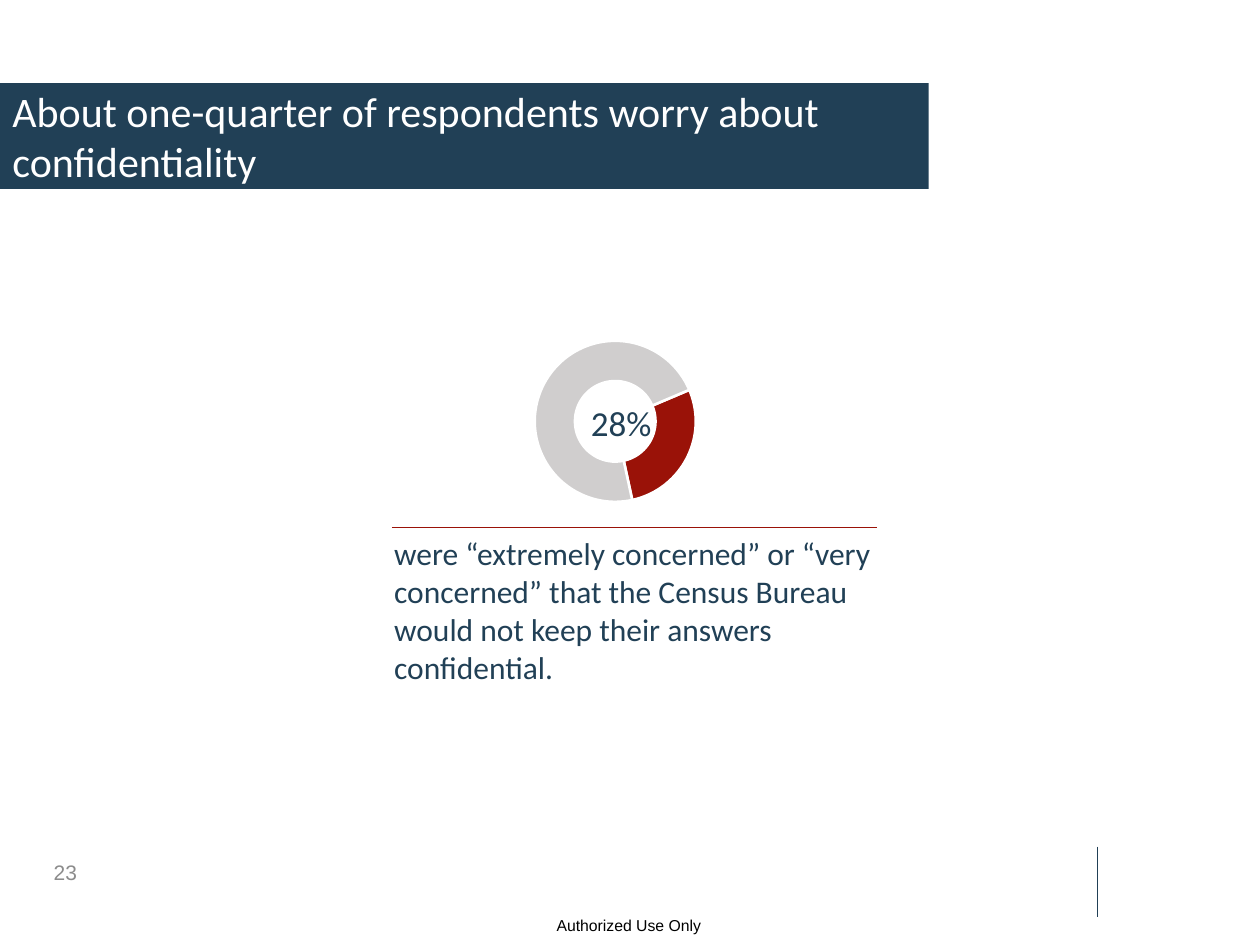
from dataclasses import dataclass

from lxml.etree import SubElement
from pptx import Presentation
from pptx.chart.data import CategoryChartData
from pptx.dml.color import RGBColor
from pptx.enum.chart import XL_CHART_TYPE
from pptx.enum.shapes import MSO_CONNECTOR, MSO_SHAPE
from pptx.enum.text import MSO_ANCHOR, PP_ALIGN
from pptx.oxml import parse_xml
from pptx.oxml.ns import nsdecls, qn
from pptx.util import Inches, Pt


@dataclass(frozen=True)
class Theme:
    navy: str = "214056"
    red: str = "9A1208"
    silver: str = "D0CECE"
    gray: str = "8C8C8C"
    white: str = "FFFFFF"
    black: str = "000000"
    body_font: str = "Calibri"
    footer_font: str = "Arial"
    title_size: float = 24
    figure_size: float = 20
    body_size: float = 18
    number_size: float = 12
    chart_size: float = 10
    footer_size: float = 9
    rule_width: float = 0.5


THEME = Theme()
WIDTH, HEIGHT = 10, 7.5
SHARE = 28
CATEGORIES = ("1", "2")
VALUES = (SHARE, 100 - SHARE)
SLICE_COLORS = (THEME.red, THEME.silver)
HOLE_SIZE, FIRST_ANGLE = 75, 67
PLOT_LAYOUT = {"x": 0.06, "y": 0.02, "w": 0.82, "h": 0.98}

BANNER_AREA = (0, 0.66, 7.37, 0.84)
CHART_AREA = (4.15, 2.59, 1.56, 1.48)
RULE_Y = 4.19
FOOTER_Y = 6.72

TEXTS = [
    ("About one-quarter of respondents worry about confidentiality",
     (0, 0.78, 6.88, 0.59), THEME.body_font, THEME.title_size, THEME.white,
     PP_ALIGN.LEFT, MSO_ANCHOR.MIDDLE),
    ("23", (0.28, FOOTER_Y, 0.43, 0.4), THEME.footer_font, THEME.number_size,
     THEME.gray, PP_ALIGN.RIGHT, MSO_ANCHOR.MIDDLE),
    ("were “extremely concerned” or “very concerned” that the Census Bureau "
     "would not keep their answers confidential.",
     (3.03, RULE_Y, 4.08, 1.31), THEME.body_font, THEME.body_size, THEME.navy,
     PP_ALIGN.LEFT, MSO_ANCHOR.TOP),
    (f"{SHARE}%", (4.58, 3.14, 0.7, 0.44), THEME.body_font, THEME.figure_size,
     THEME.navy, PP_ALIGN.CENTER, MSO_ANCHOR.TOP),
    ("Authorized Use Only", (0.13, 7.22, 9.72, 0.25), THEME.footer_font,
     THEME.footer_size, THEME.black, PP_ALIGN.CENTER, MSO_ANCHOR.TOP),
]

RULES = [
    ((8.71, FOOTER_Y), (8.71, 7.28), THEME.navy),
    ((3.11, RULE_Y), (6.96, RULE_Y), THEME.red),
]


def color(value):
    return RGBColor.from_string(value)


def inches(lengths):
    return [Inches(length) for length in lengths]


def add_banner(page):
    banner = page.shapes.add_shape(MSO_SHAPE.RECTANGLE, *inches(BANNER_AREA))
    banner.shadow.inherit = False
    banner.fill.solid()
    banner.fill.fore_color.rgb = color(THEME.navy)
    banner.line.fill.background()


def add_rule(page, start, end, tint):
    rule = page.shapes.add_connector(MSO_CONNECTOR.STRAIGHT, *inches(start + end))
    rule.line.color.rgb = color(tint)
    rule.line.width = Pt(THEME.rule_width)
    SubElement(rule._element.spPr, qn("a:effectLst"))


def add_text(page, text, area, font, size, tint, alignment, anchor):
    box = page.shapes.add_textbox(*inches(area))
    box.text_frame.word_wrap = True
    box.text_frame.vertical_anchor = anchor
    paragraph = box.text_frame.paragraphs[0]
    paragraph.text = text
    paragraph.alignment = alignment
    paragraph.font.name = font
    paragraph.font.size = Pt(size)
    paragraph.font.color.rgb = color(tint)


def add_doughnut(page):
    data = CategoryChartData()
    data.categories = CATEGORIES
    data.add_series("Series 1", VALUES)
    chart = page.shapes.add_chart(
        XL_CHART_TYPE.DOUGHNUT, *inches(CHART_AREA), data).chart
    chart.has_legend = False
    chart.has_title = False
    chart.font.name = THEME.body_font
    chart.font.size = Pt(THEME.chart_size)
    chart.font.color.rgb = color(THEME.black)

    plot = chart.plots[0]
    plot.vary_by_categories = True
    plot.has_data_labels = False
    for index, tint in enumerate(SLICE_COLORS):
        wedge = plot.series[0].points[index].format
        wedge.fill.solid()
        wedge.fill.fore_color.rgb = color(tint)
        wedge.line.color.rgb = color(THEME.white)
        wedge.line.width = Pt(1.5)

    doughnut = plot._element
    for tag, value in (("c:firstSliceAng", FIRST_ANGLE), ("c:holeSize", HOLE_SIZE)):
        setting = doughnut.find(qn(tag))
        if setting is None:
            setting = SubElement(doughnut, qn(tag))
        setting.set("val", str(value))

    plot_area = doughnut.getparent()
    for layout in plot_area.findall(qn("c:layout")):
        plot_area.remove(layout)
    shares = "".join(f'<c:{side} val="{share}"/>' for side, share in PLOT_LAYOUT.items())
    plot_area.insert(0, parse_xml(
        f'<c:layout {nsdecls("c")}><c:manualLayout><c:layoutTarget val="inner"/>'
        f'<c:xMode val="edge"/><c:yMode val="edge"/>{shares}'
        f'</c:manualLayout></c:layout>'))


def main():
    deck = Presentation()
    deck.slide_width, deck.slide_height = inches((WIDTH, HEIGHT))
    page = deck.slides.add_slide(deck.slide_layouts[6])
    add_banner(page)
    for rule in RULES:
        add_rule(page, *rule)
    add_doughnut(page)
    for text in TEXTS:
        add_text(page, *text)
    deck.save("out.pptx")


if __name__ == "__main__":
    main()
